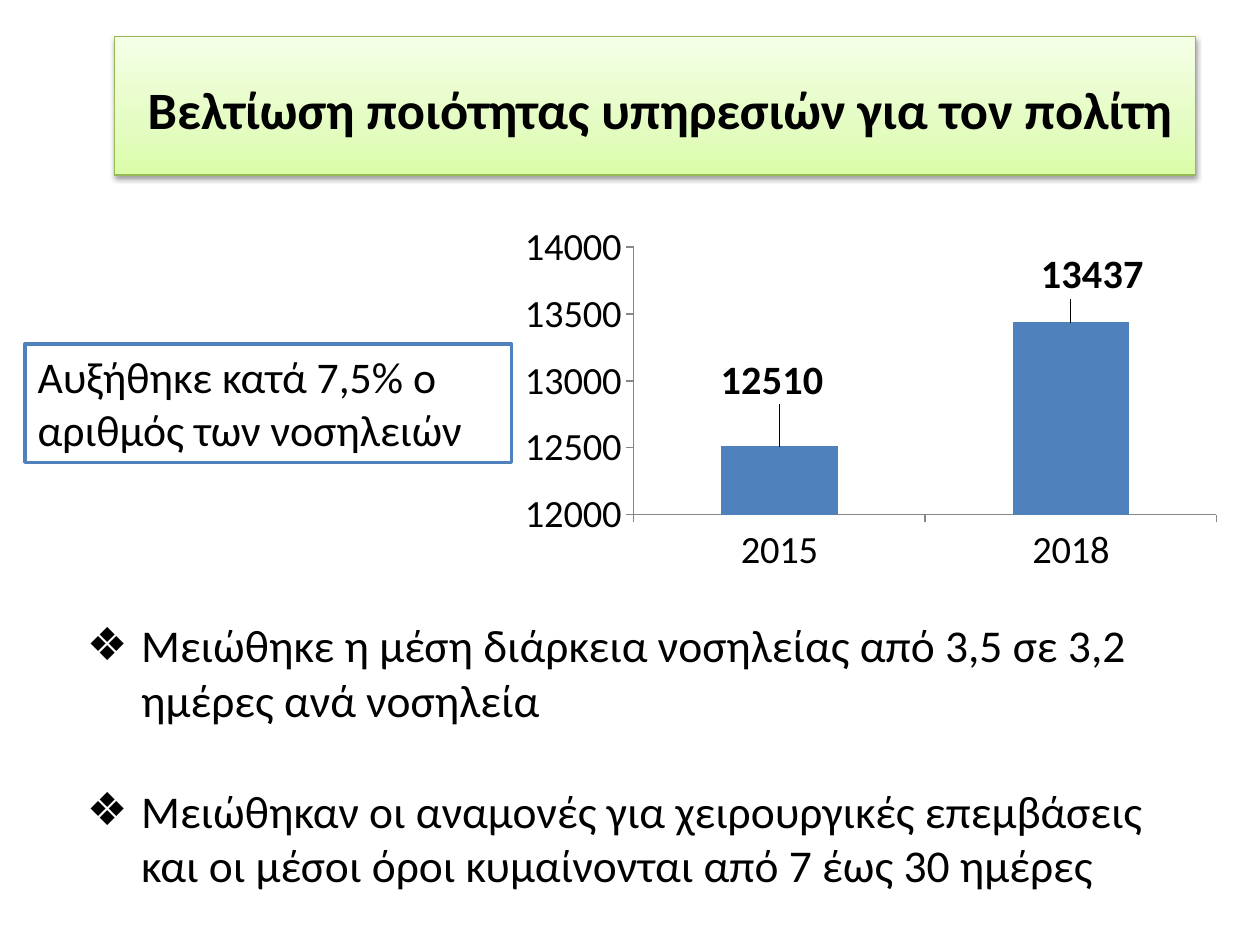
from lxml.etree import SubElement
from pptx import Presentation
from pptx.chart.data import CategoryChartData
from pptx.dml.color import RGBColor
from pptx.enum.chart import XL_CHART_TYPE, XL_LABEL_POSITION, XL_TICK_MARK
from pptx.enum.shapes import MSO_SHAPE
from pptx.enum.text import MSO_ANCHOR, MSO_AUTO_SIZE, PP_ALIGN
from pptx.oxml import parse_xml
from pptx.oxml.ns import nsdecls, qn
from pptx.util import Inches, Pt

FONT = "Calibri"
BLACK, WHITE, BLUE, GREEN, GRAY = "000000", "FFFFFF", "4F81BD", "98B955", "868686"
TITLE = "Βελτίωση ποιότητας υπηρεσιών για τον πολίτη"
TITLE_GRADIENT = [(0, "DAFDA7"), (35, "E4FCC2"), (100, "F5FFE7")]
CALLOUT = "Αυξήθηκε κατά 7,5% ο αριθμός των νοσηλειών"
ADMISSIONS = {"2015": 12510, "2018": 13437}
LABEL_SHIFTS = [(-0.01, -0.1), (0.03, -0.05)]
PLOT_AREA = (0.17, 0.09, 0.81, 0.73)
BULLETS = [
    "Μειώθηκε η μέση διάρκεια νοσηλείας από 3,5 σε 3,2 ημέρες ανά νοσηλεία",
    "Μειώθηκαν οι αναμονές για χειρουργικές επεμβάσεις και οι μέσοι όροι "
    "κυμαίνονται από 7 έως 30 ημέρες",
]


def color(value):
    """Turn a hex string into a colour."""
    return RGBColor.from_string(value)


def place(shape, left, top, width, height):
    """Move and size a shape in inches."""
    shape.left, shape.top = Inches(left), Inches(top)
    shape.width, shape.height = Inches(width), Inches(height)


def style_font(font, size, bold=False):
    """Apply the slide's typeface in black."""
    font.name, font.size, font.bold = FONT, Pt(size), bold
    font.color.rgb = color(BLACK)


def add_text(paragraph, text, size, bold=False):
    """Add one styled run to a paragraph."""
    run = paragraph.add_run()
    run.text = text
    style_font(run.font, size, bold)


def outline(shape, value, width):
    """Draw a solid outline."""
    shape.line.color.rgb = color(value)
    shape.line.width = Pt(width)


def manual_layout(*entries):
    """Build a chart layout from tag and value pairs."""
    values = "".join(f'<c:{tag} val="{value}"/>' for tag, value in entries)
    return parse_xml(
        f'<c:layout {nsdecls("c")}><c:manualLayout>{values}</c:manualLayout></c:layout>')


def add_title(slide):
    """Fill the title placeholder as a green gradient banner."""
    title = slide.shapes.title
    place(title, 0.91, 0.29, 8.58, 1.1)
    outline(title, GREEN, 0.75)
    stops = "".join(
        f'<a:gs pos="{position * 1000}"><a:srgbClr val="{value}"/></a:gs>'
        for position, value in TITLE_GRADIENT)
    gradient = parse_xml(
        f'<a:gradFill {nsdecls("a")} rotWithShape="1"><a:gsLst>{stops}</a:gsLst>'
        '<a:lin ang="16200000" scaled="0"/></a:gradFill>')
    shadow = parse_xml(
        f'<a:effectLst {nsdecls("a")}><a:outerShdw blurRad="40000" dist="20000" '
        'dir="5400000" rotWithShape="0"><a:srgbClr val="000000">'
        '<a:alpha val="38000"/></a:srgbClr></a:outerShdw></a:effectLst>')
    line = title.line._ln
    line.addprevious(gradient)
    line.addnext(shadow)
    frame = title.text_frame
    frame.word_wrap, frame.auto_size = True, MSO_AUTO_SIZE.NONE
    frame.vertical_anchor = MSO_ANCHOR.MIDDLE
    paragraph = frame.paragraphs[0]
    paragraph.alignment, paragraph.line_spacing = PP_ALIGN.CENTER, 1.1
    paragraph._p.get_or_add_pPr().set("marL", str(Inches(0.08)))
    add_text(paragraph, TITLE, 30, True)


def add_callout(slide):
    """Add the outlined statement beside the chart."""
    callout = slide.shapes.add_shape(MSO_SHAPE.RECTANGLE, 0, 0, 0, 0)
    place(callout, 0.2, 2.73, 3.86, 0.94)
    callout.shadow.inherit = False
    callout.fill.solid()
    callout.fill.fore_color.rgb = color(WHITE)
    outline(callout, BLUE, 2)
    frame = callout.text_frame
    frame.word_wrap, frame.vertical_anchor = True, MSO_ANCHOR.TOP
    frame.paragraphs[0].alignment = PP_ALIGN.LEFT
    add_text(frame.paragraphs[0], CALLOUT, 25)


def add_admissions_chart(slide):
    """Add the column chart of admissions."""
    data = CategoryChartData()
    data.categories = list(ADMISSIONS)
    data.add_series("Series 1", list(ADMISSIONS.values()))
    chart = slide.shapes.add_chart(
        XL_CHART_TYPE.COLUMN_CLUSTERED, Inches(4.06), Inches(1.7),
        Inches(5.71), Inches(2.91), data).chart
    chart.has_legend = chart.has_title = False
    style_font(chart.font, 22)
    for axis in (chart.category_axis, chart.value_axis):
        axis.has_major_gridlines = False
        axis.major_tick_mark = XL_TICK_MARK.OUTSIDE
        axis.minor_tick_mark = XL_TICK_MARK.NONE
        axis.format.line.color.rgb = color(GRAY)
    axis = chart.value_axis
    axis.minimum_scale, axis.maximum_scale, axis.major_unit = 12000, 14000, 500
    plot = chart.plots[0]
    plot.gap_width, plot.vary_by_categories = 150, False
    series = plot.series[0]
    series.format.fill.solid()
    series.format.fill.fore_color.rgb = color(BLUE)
    series.data_labels.show_value = True
    style_font(series.data_labels.font, 23, True)
    for index, (shift_x, shift_y) in enumerate(LABEL_SHIFTS):
        label = series.points[index].data_label
        style_font(label.font, 23, True)
        label.position = XL_LABEL_POSITION.OUTSIDE_END
    for element, shift in zip(series._element.iter(qn("c:dLbl")), LABEL_SHIFTS):
        element.find(qn("c:idx")).addnext(manual_layout(*zip("xy", shift)))
    plot_area = chart._chartSpace.find(".//" + qn("c:plotArea"))
    for layout in plot_area.findall(qn("c:layout")):
        plot_area.remove(layout)
    plot_area.insert(0, manual_layout(
        ("layoutTarget", "inner"), ("xMode", "edge"), ("yMode", "edge"),
        *zip("xywh", PLOT_AREA)))


def add_bullets(slide):
    """Fill the body placeholder with the bulleted results."""
    body = slide.placeholders[1]
    place(body, 0.59, 4.85, 8.74, 2.29)
    frame = body.text_frame
    frame.word_wrap, frame.auto_size = True, MSO_AUTO_SIZE.NONE
    for index, text in enumerate(BULLETS):
        paragraph = frame.add_paragraph() if index else frame.paragraphs[0]
        paragraph.space_before = Pt(32 if index else 0)
        properties = paragraph._p.get_or_add_pPr()
        properties.set("marL", str(Inches(0.43)))
        properties.set("indent", str(-Inches(0.43)))
        SubElement(properties, qn("a:buChar")).set("char", "❖")
        add_text(paragraph, text, 26)


def main():
    """Build and save the slide."""
    presentation = Presentation()
    presentation.slide_width, presentation.slide_height = Inches(10), Inches(7.5)
    slide = presentation.slides.add_slide(presentation.slide_layouts[1])
    add_title(slide)
    add_callout(slide)
    add_admissions_chart(slide)
    add_bullets(slide)
    presentation.save("out.pptx")


if __name__ == "__main__":
    main()
